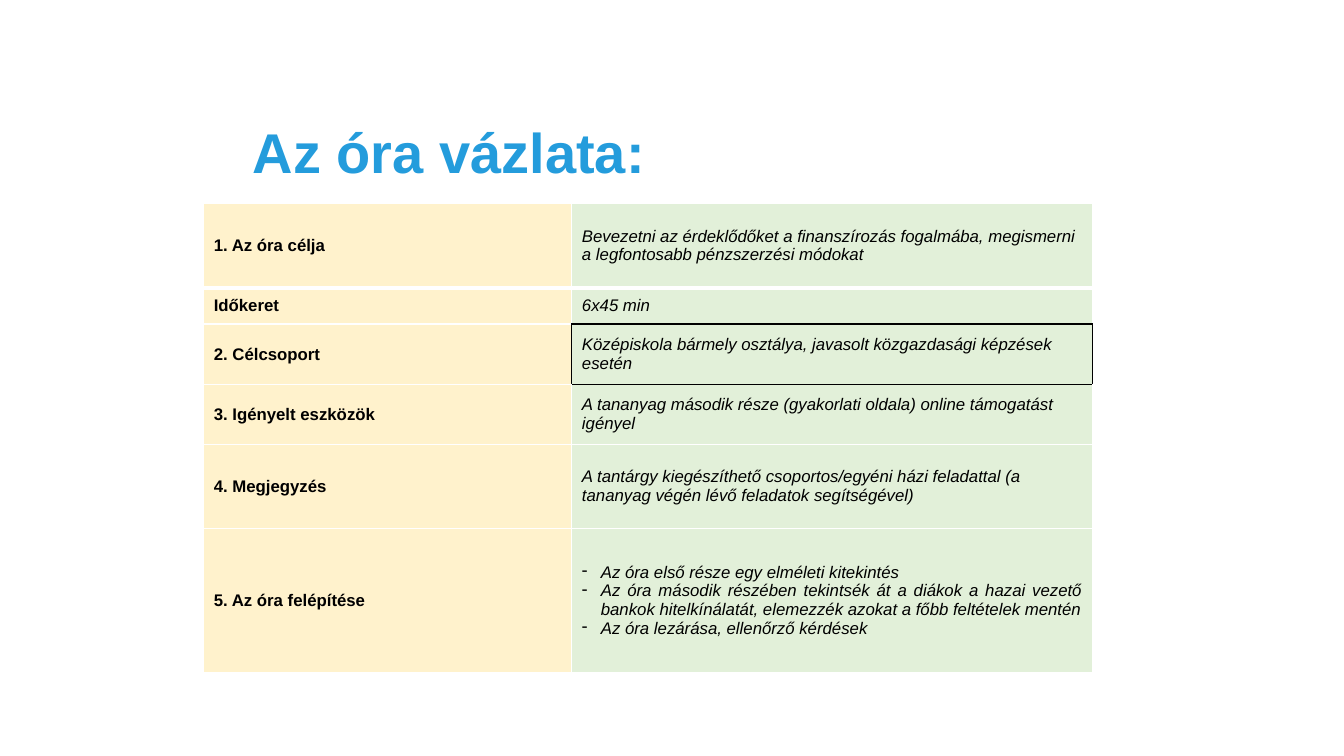
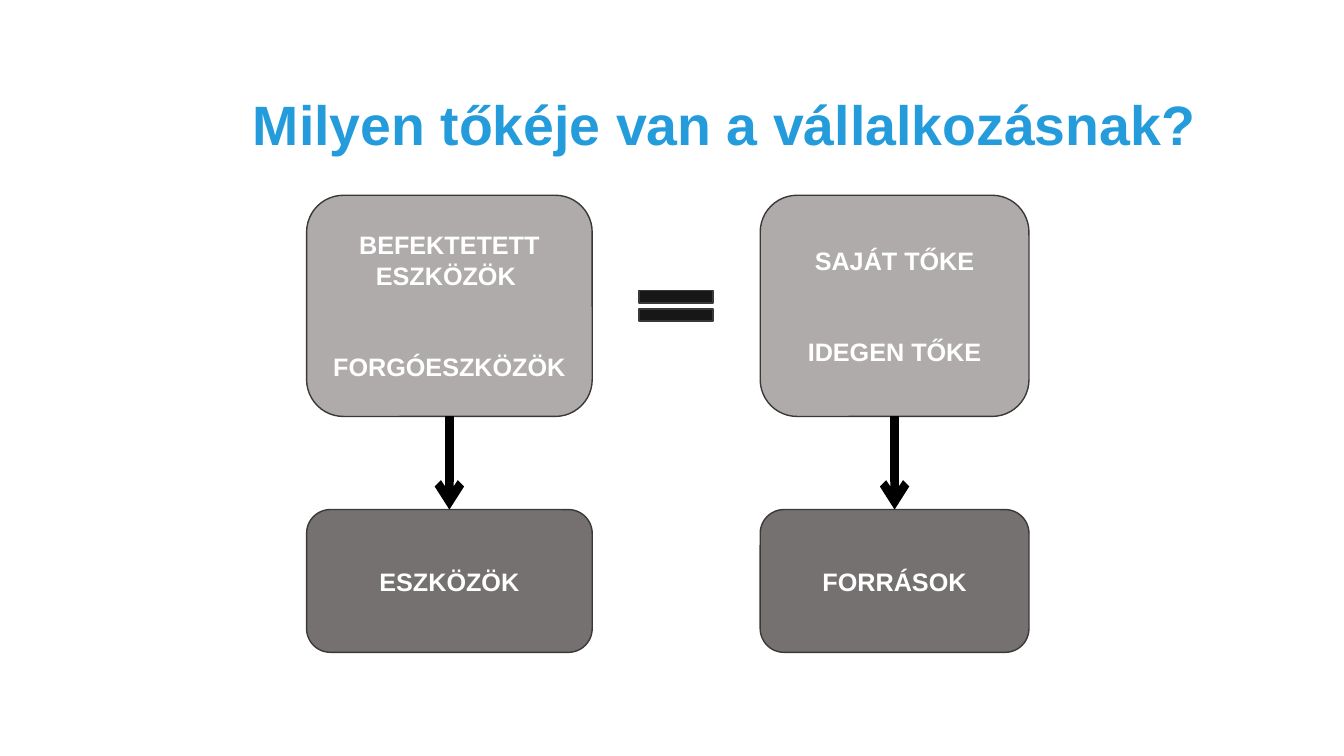
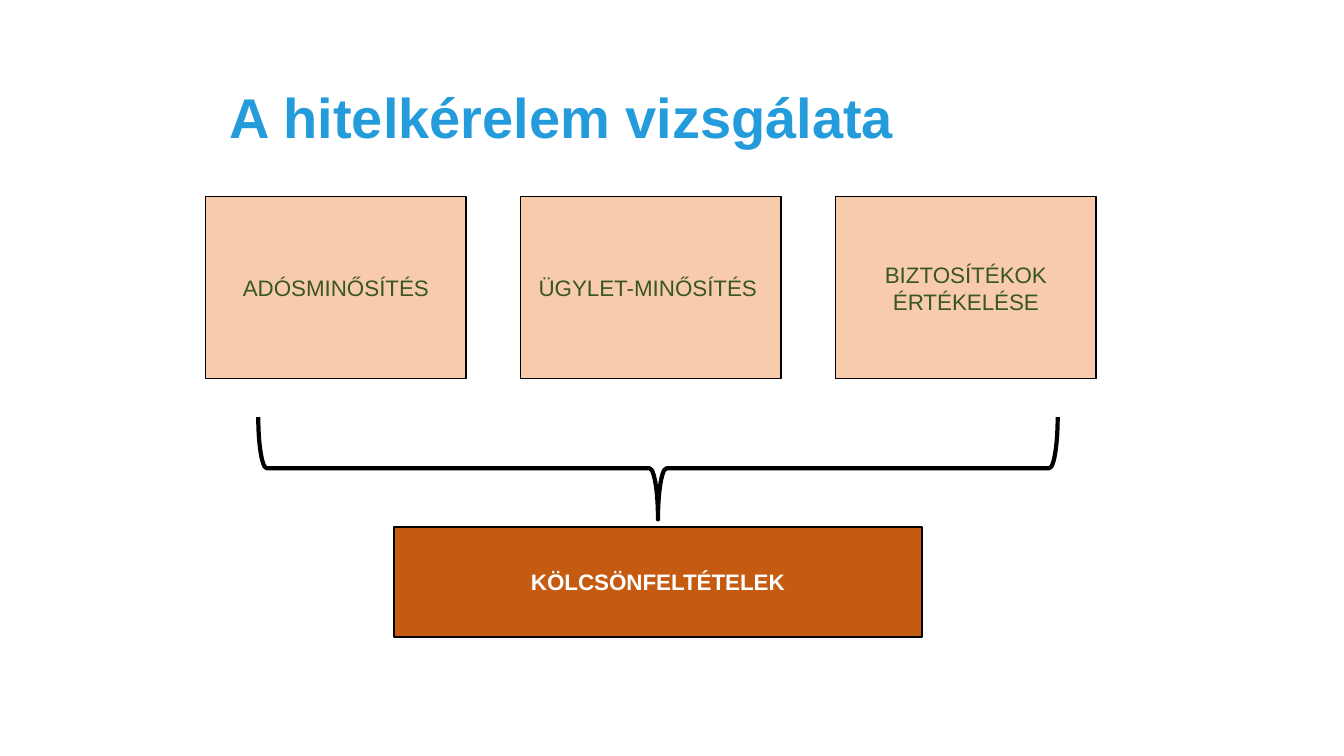
from lxml.etree import SubElement
from pptx import Presentation
from pptx.dml.color import RGBColor
from pptx.enum.shapes import MSO_CONNECTOR, MSO_SHAPE
from pptx.enum.text import MSO_ANCHOR, MSO_AUTO_SIZE, PP_ALIGN
from pptx.oxml.ns import qn
from pptx.util import Pt

BLACK, WHITE, BLUE, EDGE = "000000", "FFFFFF", "249CDC", "3B3838"
CREAM, MINT, PEACH, RUST = "FFF2CC", "E2F0D9", "F8CBAD", "C55A11"
PALE, GREY, DARK, GREEN = "AFABAB", "767171", "181717", "385723"

HEAD = {"size": Pt(40), "bold": True}
LABEL = {"size": Pt(12), "bold": True, "italic": False}
NOTE = {"size": Pt(12), "bold": False, "italic": True}
NODE = {"size": Pt(18), "bold": True}
CARD = {"size": Pt(16), "bold": False}
BASE = {"size": Pt(16), "bold": True}

ROWS = [
    (60, "1. Az óra célja", ["Bevezetni az érdeklődőket a finanszírozás fogalmába, "
                             "megismerni a legfontosabb pénzszerzési módokat"]),
    (26, "Időkeret ", ["6x45 min"]),
    (43, "2. Célcsoport", ["Középiskola bármely osztálya, javasolt közgazdasági "
                           "képzések esetén"]),
    (43, "3. Igényelt eszközök ", ["A tananyag második része (gyakorlati oldala) "
                                   "online támogatást igényel"]),
    (60, "4. Megjegyzés ", ["A tantárgy kiegészíthető csoportos/egyéni házi feladattal "
                            "(a tananyag végén lévő feladatok segítségével)"]),
    (103, "5. Az óra felépítése ", [
        "Az óra első része egy elméleti kitekintés ",
        "Az óra második részében tekintsék át a diákok a hazai vezető bankok "
        "hitelkínálatát, elemezzék azokat a főbb feltételek mentén",
        "Az óra lezárása, ellenőrző kérdések "]),
]
SIDES = {"L": (0, -1), "R": (0, 1), "T": (-1, 0), "B": (1, 0)}
FRAMED = (2, 1)


def put(item, **vals):
    """Set each given attribute on an item."""
    for name, val in vals.items():
        setattr(item, name, val)


def paint(fill, hue):
    """Make a fill solid in a hex colour."""
    fill.solid()
    fill.fore_color.rgb = RGBColor.from_string(hue)


def write(frame, lines, look, hue, align=PP_ALIGN.CENTER, gap=0):
    """Fill a text frame with one paragraph per line."""
    for num, line in enumerate(lines):
        para = frame.add_paragraph() if num else frame.paragraphs[0]
        para.alignment = align
        if num and gap:
            para.space_before = Pt(gap)
        run = para.add_run()
        run.text = line
        put(run.font, name="Arial", **look)
        paint(run.font.fill, hue)


def start(deck, text, box, size=40):
    """Add a slide with its title in the given box."""
    slide = deck.slides.add_slide(deck.slide_layouts[5])
    title = slide.shapes.title
    put(title, **dict(zip(("left", "top", "width", "height"), map(Pt, box))))
    frame = title.text_frame
    put(frame, word_wrap=True, auto_size=MSO_AUTO_SIZE.NONE,
        vertical_anchor=MSO_ANCHOR.MIDDLE)
    write(frame, [text], {**HEAD, "size": Pt(size)}, BLUE, PP_ALIGN.LEFT)
    frame.paragraphs[0].line_spacing = 0.9
    return slide


def block(slide, kind, box, hue=None, line=BLACK, width=1):
    """Add a flat shape, unfilled when no colour is given."""
    shape = slide.shapes.add_shape(kind, *map(Pt, box))
    shape.shadow.inherit = False
    if hue:
        paint(shape.fill, hue)
    else:
        shape.fill.background()
    paint(shape.line.fill, line)
    shape.line.width = Pt(width)
    put(shape.text_frame, word_wrap=True, vertical_anchor=MSO_ANCHOR.MIDDLE)
    return shape


def arrow(slide, mid, top, end):
    """Draw a heavy arrow downwards."""
    link = slide.shapes.add_connector(MSO_CONNECTOR.STRAIGHT, Pt(mid), Pt(top), Pt(mid), Pt(end))
    paint(link.line.fill, BLACK)
    link.line.width = Pt(6)
    SubElement(link.line.fill._xPr, qn("a:tailEnd"), type="arrow")
    SubElement(link._element.spPr, qn("a:effectLst"))


def rule(cell, spot):
    """Border a cell by its place in the table."""
    props = cell._tc.get_or_add_tcPr()
    row, col = spot
    for side, (down, over) in SIDES.items():
        near = (row + down, col + over)
        hue = BLACK if FRAMED in (spot, near) else WHITE
        wide = 3 if down and {row, near[0]} == {0, 1} else 1
        line = SubElement(props, qn("a:ln" + side), w=str(Pt(wide)))
        SubElement(SubElement(line, qn("a:solidFill")), qn("a:srgbClr"), val=hue)


def dash(para):
    """Give a paragraph a hanging dash and justify it."""
    props = para._p.get_or_add_pPr()
    props.set("marL", str(Pt(13.5)))
    props.set("indent", str(Pt(-13.5)))
    SubElement(props, qn("a:buChar"), char="-")
    para.alignment = PP_ALIGN.JUSTIFY


def plan(slide, box):
    """Place the lesson table in a box."""
    table = slide.shapes.add_table(len(ROWS), 2, *map(Pt, box)).table
    put(table, first_row=False, horz_banding=False)
    left = 263
    for col, wide in zip(table.columns, (left, box[2] - left)):
        col.width = Pt(wide)
    for row, (tall, label, notes) in enumerate(ROWS):
        table.rows[row].height = Pt(tall)
        parts = (([label], LABEL, CREAM, PP_ALIGN.JUSTIFY), (notes, NOTE, MINT, PP_ALIGN.LEFT))
        for col, (lines, look, hue, align) in enumerate(parts):
            cell = table.cell(row, col)
            rule(cell, (row, col))
            paint(cell.fill, hue)
            cell.vertical_anchor = MSO_ANCHOR.MIDDLE
            write(cell.text_frame, lines, look, BLACK, align)
            if len(lines) > 1:
                for para in cell.text_frame.paragraphs:
                    dash(para)


def funds(slide, box):
    """Place the two balanced columns of capital in a box."""
    x, y, w, h = box
    tall, low, left, right = 158, 102, 204, 192
    sides = (
        (x, left, ["BEFEKTETETT ESZKÖZÖK ", "FORGÓESZKÖZÖK"], "ESZKÖZÖK"),
        (x + w - right, right, ["SAJÁT TŐKE", "IDEGEN TŐKE"], "FORRÁSOK"),
    )
    for edge, wide, parts, total in sides:
        for top, high, hue, lines in ((y, tall, PALE, parts), (y + h - low, low, GREY, [total])):
            node = block(slide, MSO_SHAPE.ROUNDED_RECTANGLE, (edge, top, wide, high), hue, EDGE)
            write(node.text_frame, lines, NODE, WHITE, gap=44)
        arrow(slide, edge + wide / 2, y + tall, y + h - low)
    mid = x + (left + w - right) / 2
    block(slide, MSO_SHAPE.MATH_EQUAL, (mid - 36, y + tall / 2 - 18.5, 72, 37), DARK, EDGE)


def check(slide, box):
    """Place three cards, a brace and their result in a box."""
    x, y, w, h = box
    names = ["ADÓSMINŐSÍTÉS", "ÜGYLET-MINŐSÍTÉS ", "BIZTOSÍTÉKOK ÉRTÉKELÉSE"]
    wide = 186
    step = (w - wide) / (len(names) - 1)
    for num, name in enumerate(names):
        card = block(slide, MSO_SHAPE.RECTANGLE, (x + num * step, y, wide, 130), PEACH)
        write(card.text_frame, [name], CARD, GREEN)
    mid = x + w / 2 + 5
    deep, span = 73, 571
    brace = block(slide, MSO_SHAPE.RIGHT_BRACE,
                  (mid - deep / 2, y + 194 - span / 2, deep, span), width=3)
    brace.rotation = 90
    low, base = 78.5, 377
    result = block(slide, MSO_SHAPE.RECTANGLE, (mid - base / 2, y + h - low, base, low), RUST)
    write(result.text_frame, ["KÖLCSÖNFELTÉTELEK"], BASE, WHITE)


def main():
    """Build the deck and save it."""
    deck = Presentation()
    put(deck, slide_width=Pt(960), slide_height=Pt(540))
    plan(start(deck, "Az óra vázlata:", (173.5, 94, 408, 34)), (145.5, 145.5, 635, 335))
    funds(start(deck, "Milyen tőkéje van a vállalkozásnak?", (173.5, 46, 707, 90), 39.6),
          (219, 139.5, 516, 326.5))
    check(start(deck, "A hitelkérelem vizsgálata", (157, 41, 552, 90)), (147, 140.5, 636, 314.5))
    deck.save("out.pptx")


if __name__ == "__main__":
    main()
